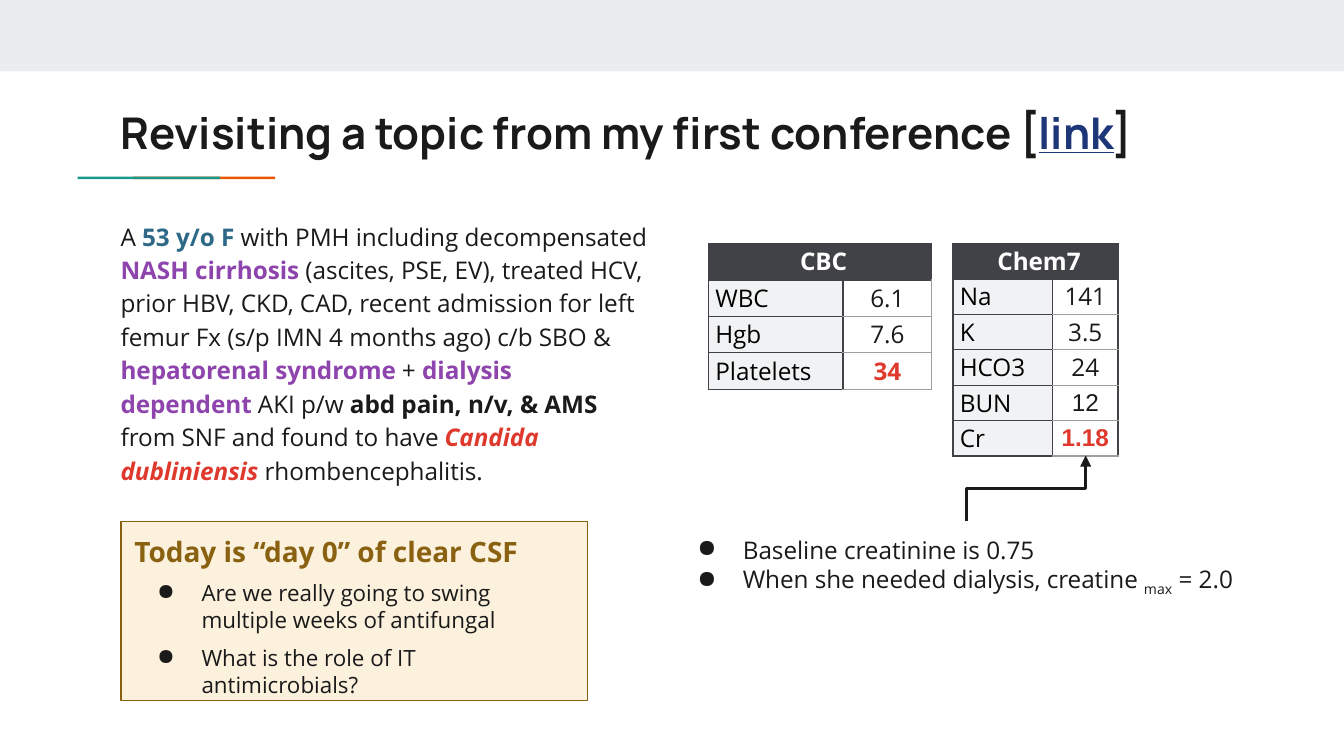
from lxml import etree
from pptx import Presentation
from pptx.dml.color import RGBColor
from pptx.enum.shapes import MSO_CONNECTOR, MSO_SHAPE
from pptx.enum.text import MSO_ANCHOR, PP_ALIGN
from pptx.oxml.ns import qn
from pptx.util import Cm, Pt

RECTANGLE = MSO_SHAPE.RECTANGLE
ELBOW = MSO_CONNECTOR.ELBOW
TOP, MIDDLE = MSO_ANCHOR.TOP, MSO_ANCHOR.MIDDLE
LEFT, CENTER = PP_ALIGN.LEFT, PP_ALIGN.CENTER

COLORS = {
    "band": "E9EDEE", "teal": "1A9988", "orange": "EB5600", "ink": "1A1A1A",
    "black": "000000", "white": "FFFFFF", "link": "1C3678", "blue": "2D6987",
    "purple": "8E44AD", "red": "DF382C", "slate": "404247", "grey": "9E9E9E",
    "label": "F1F2F3", "cream": "FBF1DD", "brown": "896110",
}
BOLD = {"bold": True}
PURPLE = {"color": "purple", "bold": True}
RED = {"color": "red", "bold": True}


def rgb(name):
    return RGBColor.from_string(COLORS[name])


def add_color(parent, name):
    etree.SubElement(parent, qn("a:srgbClr"), val=COLORS[name])


class SlideBuilder:
    font = "Open Sans"
    size = 13
    inset = Cm(0.25)

    def __init__(self, slide):
        self.slide = slide

    def span(self, para, text, color="ink", size=None, font=None, bold=False,
             italic=False, underline=False, baseline=0):
        span = para.add_run()
        span.text = text
        style = span.font
        style.name = font or self.font
        style.size = Pt(size or self.size)
        style.color.rgb = rgb(color)
        style.bold, style.italic, style.underline = bold, italic, underline
        if baseline:
            span._r.get_or_add_rPr().set("baseline", str(baseline * 1000))

    def bullet(self, para, indent):
        properties = para._p.get_or_add_pPr()
        properties.set("marL", str(Cm(1.27)))
        properties.set("indent", str(-Cm(indent)))
        add_color(etree.SubElement(properties, qn("a:buClr")), "ink")
        etree.SubElement(properties, qn("a:buChar"), char="●")

    def frame(self, box):
        frame = box.text_frame
        frame.word_wrap = True
        frame.vertical_anchor = TOP
        frame.margin_left = frame.margin_right = self.inset
        frame.margin_top = frame.margin_bottom = self.inset
        frame.paragraphs[0].alignment = LEFT
        return frame

    def text(self, left, top, width, height):
        box = self.slide.shapes.add_textbox(Cm(left), Cm(top), Cm(width), Cm(height))
        return self.frame(box)

    def rectangle(self, left, top, width, height, fill, line=None):
        box = self.slide.shapes.add_shape(
            RECTANGLE, Cm(left), Cm(top), Cm(width), Cm(height))
        box.shadow.inherit = False
        box.fill.solid()
        box.fill.fore_color.rgb = rgb(fill)
        if line:
            box.line.color.rgb = rgb(line)
            box.line.width = Pt(0.75)
        else:
            box.line.fill.background()
        return box

    def cell(self, cell, text, fill, align, inset, borders, **style):
        properties = cell._tc.get_or_add_tcPr()
        for side, (color, width) in zip("LRTB", borders):
            line = etree.SubElement(properties, qn(f"a:ln{side}"), w=str(Pt(width)))
            add_color(etree.SubElement(line, qn("a:solidFill")), color)
        if fill:
            cell.fill.solid()
            cell.fill.fore_color.rgb = rgb(fill)
        else:
            cell.fill.background()
        cell.vertical_anchor = MIDDLE
        cell.margin_left = Cm(inset)
        cell.margin_right = cell.margin_top = cell.margin_bottom = 0
        para = cell.text_frame.paragraphs[0]
        para.alignment = align
        if text:
            self.span(para, text, **style)

    def lab_table(self, left, top, widths, row_height, title, right_edge, results):
        count = len(results) + 1
        table = self.slide.shapes.add_table(
            count, 2, Cm(left), Cm(top), Cm(sum(widths)), Cm(row_height * count)).table
        table.first_row = table.horz_banding = False
        for column, width in zip(table.columns, widths):
            column.width = Cm(width)
        for row in table.rows:
            row.height = Cm(row_height)
        dark, pale, thick = ("slate", 0.75), ("grey", 0.75), ("slate", 1.5)
        table.cell(0, 0).merge(table.cell(0, 1))
        for column, heading in enumerate((title, "")):
            self.cell(table.cell(0, column), heading, "slate", CENTER, 0.13,
                      (dark, dark, dark, thick), color="white", bold=True)
        for row, (name, value, style) in enumerate(results, 1):
            first = row == 1
            self.cell(table.cell(row, 0), name, "label", LEFT, 0.13,
                      (dark, dark, thick if first else dark, dark), color="black")
            self.cell(table.cell(row, 1), value, None, CENTER, 0,
                      (dark, (right_edge, 0.75), thick if first else pale, pale), **style)

    def elbow_arrow(self, left, top, width, height):
        arrow = self.slide.shapes.add_connector(
            ELBOW, Cm(left), Cm(top), Cm(left + width), Cm(top + height))
        arrow.line.color.rgb = rgb("ink")
        arrow.line.width = Pt(1.5)
        properties = arrow._element.spPr
        properties.find(qn("a:xfrm")).set("rot", str(270 * 60000))
        etree.SubElement(properties.find(qn("a:ln")), qn("a:tailEnd"), type="triangle")
        etree.SubElement(properties, qn("a:effectLst"))


def main():
    deck = Presentation()
    deck.slide_width, deck.slide_height = Cm(25.4), Cm(14.29)
    page = SlideBuilder(deck.slides.add_slide(deck.slide_layouts[6]))

    page.rectangle(0, 0, 25.4, 1.35, "band")
    for left, color in ((2.51, "orange"), (1.47, "teal")):
        page.rectangle(left, 3.34, 2.69, 0.05, color)

    title = page.text(2.03, 1.75, 21.36, 1.5).paragraphs[0]
    for text, style in (
        ("Revisiting a topic from my first conference [", {}),
        ("link", {"color": "link", "underline": True}),
        ("]", {}),
    ):
        page.span(title, text, size=23.4, font="Manrope", bold=True, **style)

    history = page.text(2.03, 3.86, 10.49, 6.27).paragraphs[0]
    history.line_spacing = 1.15
    history.space_after = Pt(12)
    for text, style in (
        ("A ", {}),
        ("53 y/o F", {"color": "blue", "bold": True}),
        (" with PMH including decompensated ", {}),
        ("NASH cirrhosis", PURPLE),
        (" (ascites, PSE, EV), treated HCV, prior HBV, CKD, CAD, recent admission "
         "for left femur Fx (s/p IMN 4 months ago) c/b SBO & ", {}),
        ("hepatorenal syndrome", PURPLE),
        (" + ", {}),
        ("dialysis dependent", PURPLE),
        (" AKI p/w ", {}),
        ("abd pain, n/v, & AMS ", BOLD),
        ("from SNF and found to have ", {}),
        ("Candida dubliniensis ", {**RED, "italic": True}),
        ("rhombencephalitis.", {}),
    ):
        page.span(history, text, **style)

    page.lab_table(13.39, 4.6, (2.54, 1.68), 0.69, "CBC", "grey", (
        ("WBC", "6.1", {}), ("Hgb", "7.6", {}), ("Platelets", "34", RED)))
    page.lab_table(18.01, 4.6, (1.88, 1.24), 0.67, "Chem7", "slate", (
        ("Na", "141", {}), ("K", "3.5", {}), ("HCO3", "24", {}),
        ("BUN", "12", {"font": "Arial"}), ("Cr", "1.18", {**RED, "font": "Arial"})))

    notes = page.text(12.52, 9.86, 11.53, 1.63)
    baseline, peak = notes.paragraphs[0], notes.add_paragraph()
    for para in (baseline, peak):
        page.bullet(para, 0.86)
    page.span(baseline, "Baseline creatinine is 0.75")
    page.span(peak, "When she needed dialysis, creatine ")
    page.span(peak, "max", baseline=-25)
    page.span(peak, " = 2.0")

    page.elbow_arrow(18.77, 8.1, 1.24, 2.26)

    callout = page.frame(page.rectangle(2.29, 9.86, 8.81, 3.38, "cream", "brown"))
    page.span(callout.paragraphs[0], "Today is “day 0” of clear CSF", "brown", 15, bold=True)
    for question in ("Are we really going to swing multiple weeks of antifungal",
                     "What is the role of IT antimicrobials?"):
        para = callout.add_paragraph()
        para.alignment = LEFT
        para.space_before = Pt(6)
        page.bullet(para, 0.84)
        page.span(para, question, size=12)

    deck.save("out.pptx")


if __name__ == "__main__":
    main()
